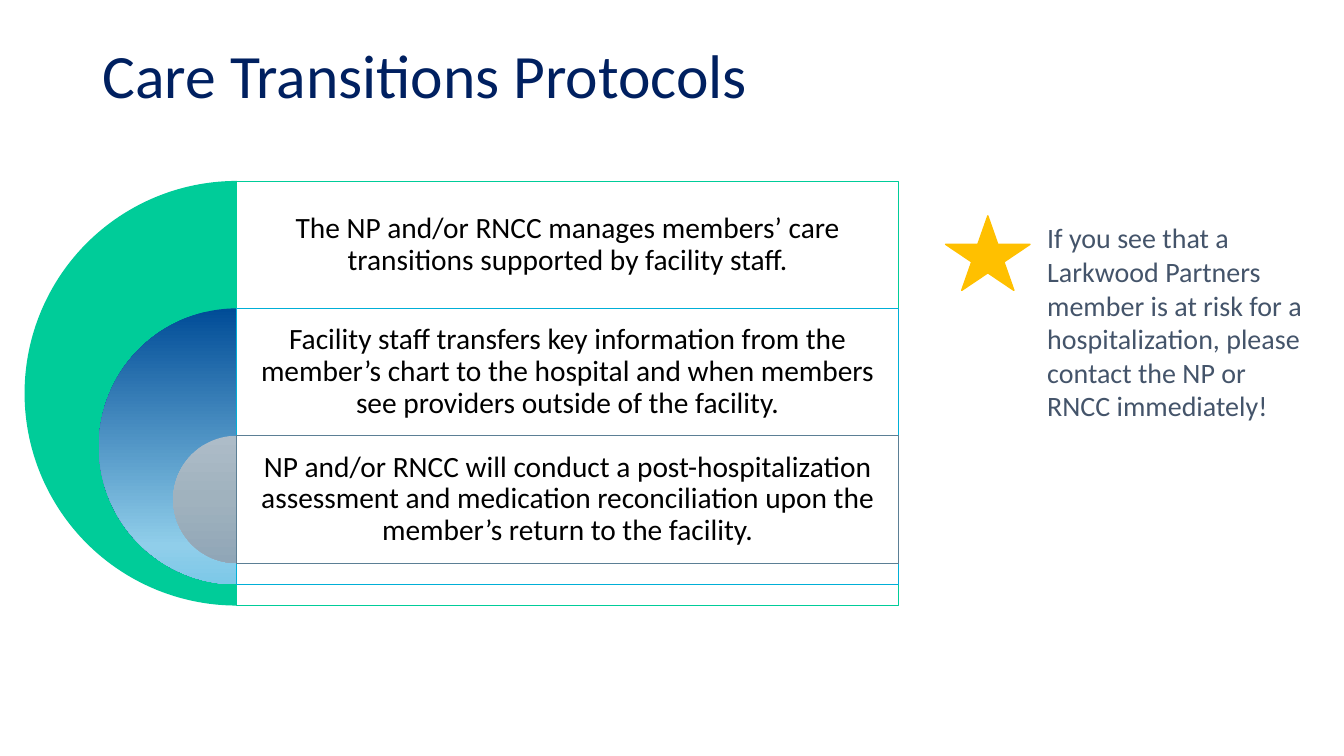
from copy import deepcopy

from pptx import Presentation
from pptx.dml.color import RGBColor
from pptx.enum.shapes import MSO_SHAPE as SHAPE
from pptx.enum.text import MSO_ANCHOR as ANCHOR, MSO_AUTO_SIZE as AUTO_SIZE, PP_ALIGN as ALIGN
from pptx.oxml.ns import qn
from pptx.util import Cm, Pt

COLORS = {
    "title": "002060", "body": "000000", "note": "44546A",
    "star": "FFC000", "panel": "FFFFFF",
}
# Each step: text, panel outline, ring colour stops (position, colour)
STEPS = [
    ("The NP and/or RNCC manages members’ care transitions supported by facility staff.",
     "00CC99", [(0, "00CC99")]),
    ("Facility staff transfers key information from the member’s chart to the hospital "
     "and when members see providers outside of the facility.",
     "00AFD7", [(0, "004C97"), (0.86, "90CEEA"), (1, "7CC8E8")]),
    ("NP and/or RNCC will conduct a post-hospitalization assessment and medication "
     "reconciliation upon the member’s return to the facility.",
     "5B7F95", [(0, "ADBCC8"), (0.5, "A0B2BE"), (1, "90A6B7")]),
]
NOTE = ("If you see that a Larkwood Partners member is at risk for a hospitalization, "
        "please contact the NP or RNCC immediately!")


def rgb(value):
    return RGBColor.from_string(value)


def write_text(shape, text, color, size, frame_format, paragraph_format):
    frame = shape.text_frame
    frame.text = text
    paragraph = frame.paragraphs[0]
    font_format = {"name": "Calibri", "size": Pt(size), "bold": False}
    for target, values in ((frame, {"word_wrap": True, **frame_format}),
                           (paragraph, paragraph_format),
                           (paragraph.font, font_format)):
        for name, value in values.items():
            setattr(target, name, value)
    paragraph.font.color.rgb = rgb(color)


def fill_shape(shape, stops):
    """Fill with one solid colour, or with a gradient from top to bottom."""
    fill = shape.fill
    if len(stops) == 1:
        fill.solid()
        fill.fore_color.rgb = rgb(stops[0][1])
        return
    fill.gradient()
    fill.gradient_angle = 270
    stop_list = shape._element.spPr.find(".//" + qn("a:gsLst"))
    while len(stop_list) < len(stops):
        stop_list.append(deepcopy(stop_list[-1]))
    for stop, (position, color) in zip(fill.gradient_stops, stops):
        stop.position = position
        stop.color.rgb = rgb(color)


def add_plain_shape(slide, kind, box, stops, line=None, line_width=0.5):
    shape = slide.shapes.add_shape(kind, *map(Cm, box))
    shape.shadow.inherit = False
    fill_shape(shape, stops)
    if line:
        shape.line.color.rgb = rgb(line)
        shape.line.width = Pt(line_width)
    else:
        shape.line.fill.background()
    return shape


def add_title(slide, box, text):
    title = slide.shapes.title
    title.left, title.top, title.width, title.height = map(Cm, box)
    write_text(title, text, COLORS["title"], 44,
               {"vertical_anchor": ANCHOR.TOP, "auto_size": AUTO_SIZE.NONE},
               {"alignment": ALIGN.LEFT, "line_spacing": 0.9})


def add_nested_steps(slide, box, steps):
    """Half rings that shrink towards the panels' left edge, one panel each."""
    left, top, width, height = box
    panel_left = left + height / 2
    panel_width = width - height / 2
    row = 0.3 * height
    margins = {f"margin_{side}": Cm(0.23) for side in ("left", "right", "top", "bottom")}
    for index, (text, outline, stops) in enumerate(steps):
        size = height * (1 - 0.35 * index)
        row_top = top + index * row
        # Half ring
        ring = add_plain_shape(slide, SHAPE.PIE,
                               (panel_left - size / 2, row_top, size, size), stops)
        ring.adjustments[0], ring.adjustments[1] = 54, 162
        # Panel
        panel = add_plain_shape(slide, SHAPE.RECTANGLE,
                                (panel_left, row_top, panel_width, size),
                                [(0, COLORS["panel"])], outline)
        color = panel._element.spPr.find(qn("a:solidFill"))[0]
        color.append(color.makeelement(qn("a:alpha"), {"val": "90000"}))
        # Text in the panel's visible band
        label = slide.shapes.add_textbox(*map(Cm, (panel_left, row_top, panel_width, row)))
        write_text(label, text, COLORS["body"], 21,
                   {"vertical_anchor": ANCHOR.MIDDLE, **margins},
                   {"alignment": ALIGN.CENTER, "line_spacing": 0.9})


def add_star_note(slide, box, text):
    left, top, width, height = box
    add_plain_shape(slide, SHAPE.STAR_5_POINT, (left, top, 2.13, 1.88),
                    [(0, COLORS["star"])], COLORS["star"], 1)
    indent = 2.31
    note = slide.shapes.add_textbox(*map(Cm, (left + indent, top, width - indent, height)))
    write_text(note, text, COLORS["note"], 20,
               {"auto_size": AUTO_SIZE.SHAPE_TO_FIT_TEXT}, {"alignment": ALIGN.LEFT})


def main():
    presentation = Presentation()
    presentation.slide_width, presentation.slide_height = Cm(33.87), Cm(19.05)
    slide = presentation.slides.add_slide(presentation.slide_layouts[5])
    add_nested_steps(slide, (0.62, 4.56, 22.02, 10.7), STEPS)
    add_star_note(slide, (23.83, 5.44, 9.42, 5.38), NOTE)
    add_title(slide, (2.33, 1.01, 29.21, 2.37), "Care Transitions Protocols")
    presentation.save("out.pptx")


if __name__ == "__main__":
    main()
